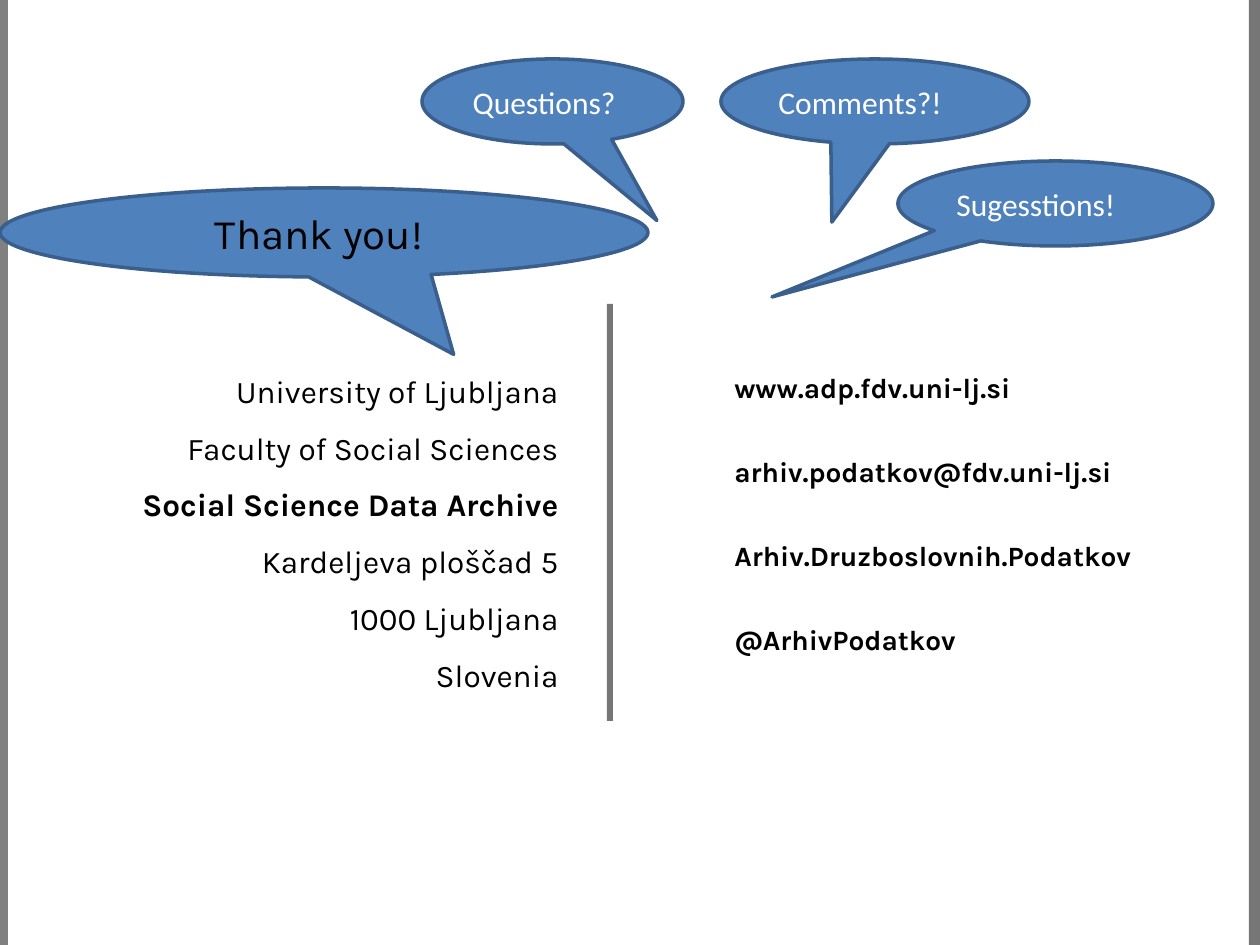
"""Builds a closing slide with speech bubbles and contact details."""
from lxml import etree
from pptx import Presentation
from pptx.dml.color import RGBColor
from pptx.enum.shapes import MSO_SHAPE
from pptx.enum.text import MSO_ANCHOR, MSO_AUTO_SIZE, PP_ALIGN
from pptx.oxml.ns import qn
from pptx.util import Pt

PX = 914400 / 126
RECT = MSO_SHAPE.RECTANGLE
BUBBLE = MSO_SHAPE.OVAL_CALLOUT
MIDDLE = MSO_ANCHOR.MIDDLE
GROW, FIXED = MSO_AUTO_SIZE.SHAPE_TO_FIT_TEXT, MSO_AUTO_SIZE.NONE
LEFT, CENTER, RIGHT = PP_ALIGN.LEFT, PP_ALIGN.CENTER, PP_ALIGN.RIGHT

BLACK = RGBColor(0x00, 0x00, 0x00)
WHITE = RGBColor(0xFF, 0xFF, 0xFF)
GRAY = RGBColor(0x76, 0x76, 0x76)
SILVER = RGBColor(0x80, 0x80, 0x80)
BLUE = RGBColor(0x4F, 0x81, 0xBD)
NAVY = RGBColor(0x3A, 0x5F, 0x8C)


def emu(*sizes):
    return [round(size * PX) for size in sizes]


class Deck:
    def __init__(self, width, height):
        self.show = Presentation()
        self.show.slide_width, self.show.slide_height = emu(width, height)
        self.slide = self.show.slides.add_slide(self.show.slide_layouts[1])
        title = self.slide.shapes.title.element
        title.getparent().remove(title)

    def paint(self, shape, fill, line=None):
        shape.fill.solid()
        shape.fill.fore_color.rgb = fill
        if line is None:
            shape.line.fill.background()
        else:
            shape.line.color.rgb = line
            shape.line.width = Pt(2)

    def label(self, para, text, size, font, color, bold=False):
        run = para.add_run()
        run.text = text
        run.font.size = Pt(size)
        run.font.name = font
        run.font.bold = bold
        run.font.color.rgb = color

    def bar(self, box, fill, line=None):
        shape = self.slide.shapes.add_shape(RECT, *emu(*box))
        shape.shadow.inherit = False
        self.paint(shape, fill, line)

    def lines(self, box, rows, size, space, align):
        frame = self.slide.shapes.add_textbox(*emu(*box)).text_frame
        frame.word_wrap = True
        frame.auto_size = GROW
        for i, (text, bold) in enumerate(rows):
            para = frame.add_paragraph() if i else frame.paragraphs[0]
            para.alignment = align
            para.line_spacing = space
            self.label(para, text, size, "Karla", BLACK, bold)

    def style(self, shape, tail, align):
        shape.adjustments[0], shape.adjustments[1] = tail
        self.paint(shape, BLUE, NAVY)
        frame = shape.text_frame
        frame.word_wrap = True
        frame.auto_size = FIXED
        frame.vertical_anchor = MIDDLE
        para = frame.paragraphs[0]
        para.alignment = align
        para.space_before = Pt(0)
        return para

    def bubble(self, box, tail, text):
        shape = self.slide.shapes.add_shape(BUBBLE, *emu(*box))
        shape.shadow.inherit = False
        self.label(self.style(shape, tail, LEFT), text, 18, "Calibri", WHITE)

    def thanks(self, box, tail, text):
        shape = self.slide.placeholders[1]
        shape.left, shape.top, shape.width, shape.height = emu(*box)
        node = shape.element
        node.getparent().append(node)
        form = etree.SubElement(node.spPr, qn("a:prstGeom"), prst="wedgeEllipseCallout")
        etree.SubElement(form, qn("a:avLst"))
        para = self.style(shape, tail, CENTER)
        props = para._p.get_or_add_pPr()
        props.set("marL", "0")
        props.set("indent", "0")
        etree.SubElement(props, qn("a:buNone"))
        self.label(para, text, 24, "Karla", BLACK)


def main():
    deck = Deck(1260, 945)
    deck.bar((1249, 0, 11, 945), GRAY)
    deck.bar((-5, 0, 11, 945), SILVER, SILVER)
    deck.lines((64, 347, 507, 349), [
        ("University of Ljubljana", False),
        ("Faculty of Social Sciences", False),
        ("Social Science Data Archive", True),
        ("Kardeljeva ploščad 5", False),
        ("1000 Ljubljana", False),
        ("Slovenia", False),
    ], 18, 1.5, RIGHT)
    deck.lines((722, 314, 454, 363), [
        ("www.adp.fdv.uni-lj.si", True),
        ("arhiv.podatkov@fdv.uni-lj.si", True),
        ("Arhiv.Druzboslovnih.Podatkov", True),
        ("@ArhivPodatkov", True),
    ], 16, 2.5, LEFT)
    deck.bar((607, 304, 6, 417), GRAY)
    for box, tail, text in (
        ((898, 161, 315, 85), (-0.9, 1.1), "Sugesstions!"),
        ((422, 59, 261, 85), (0.4, 1.4), "Questions?"),
        ((721, 59, 308, 85), (-0.14, 1.42), "Comments?!"),
    ):
        deck.bubble(box, tail, text)
    deck.thanks((0, 188, 648, 89), (0.2, 1.37), "Thank you! ")
    deck.show.save("out.pptx")


if __name__ == "__main__":
    main()
